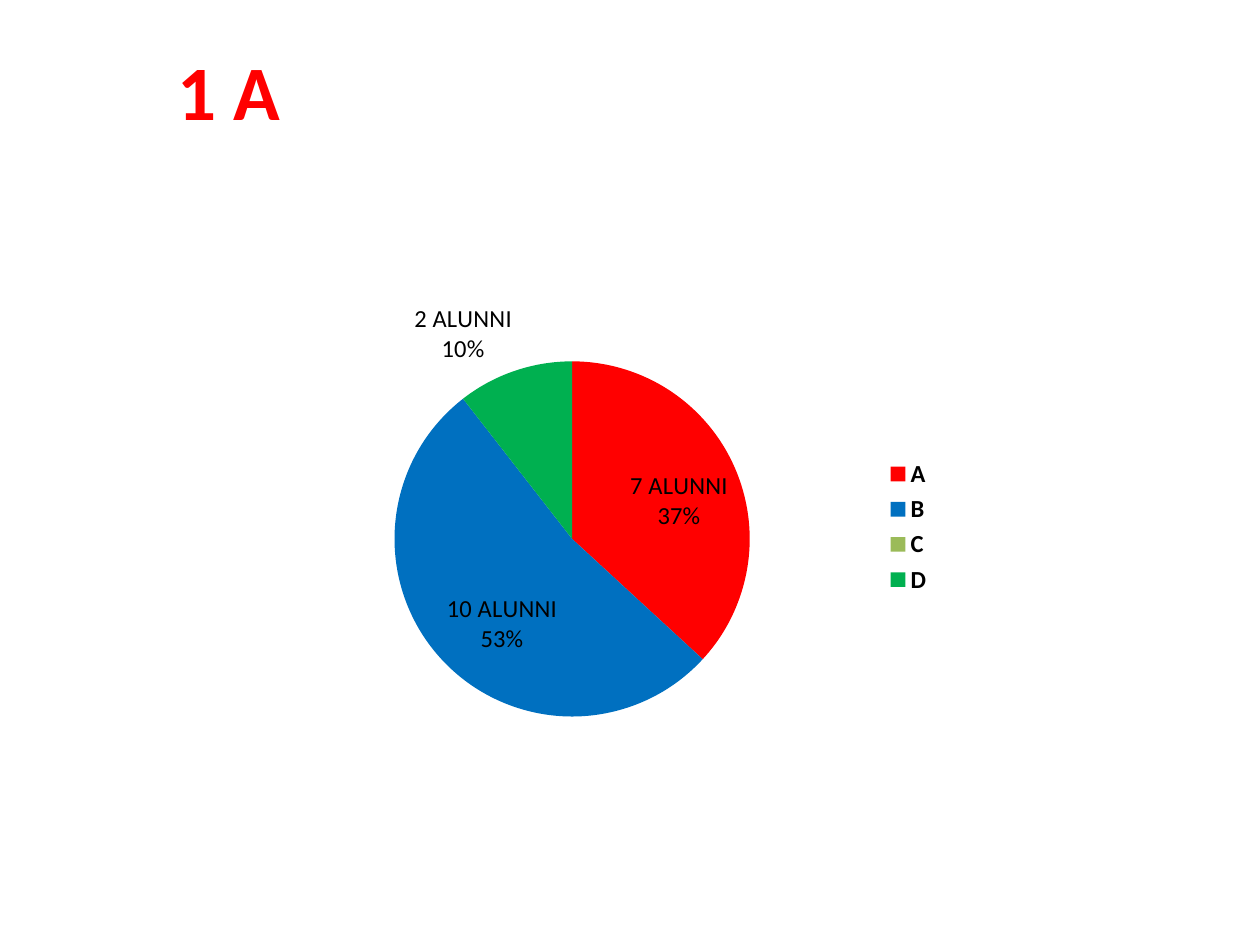
from lxml.etree import SubElement
from pptx import Presentation
from pptx.chart.data import CategoryChartData
from pptx.dml.color import RGBColor
from pptx.enum.chart import XL_CHART_TYPE, XL_LABEL_POSITION, XL_LEGEND_POSITION
from pptx.enum.text import MSO_ANCHOR, PP_ALIGN
from pptx.oxml.ns import qn
from pptx.util import Inches, Pt

FONT = "Calibri"
COLORS = {
    "title": "FF0000",
    "text": "000000",
    "A": "FF0000",
    "B": "0070C0",
    "C": "9BBB59",
    "D": "00B050",
}
PUPILS = {"A": 7, "B": 10, "C": None, "D": 2}
LABELS = {
    "A": (["7 ALUNNI", "37%"], XL_LABEL_POSITION.INSIDE_END),
    "B": (["10 ALUNNI", "53%"], XL_LABEL_POSITION.INSIDE_END),
    "D": (["2 ALUNNI", "10%"], XL_LABEL_POSITION.OUTSIDE_END),
}
TITLE_BOX = (0.083, 0.039, 0.197, 0.112)
CHART_BOX = (0.181, 0.3, 0.569, 0.515)
PIE_SHARES = {"x": 0.23, "y": 0.16, "w": 0.5, "h": 0.73}


def share_box(deck, shares):
    sides = (deck.slide_width, deck.slide_height) * 2
    return [round(share * side) for share, side in zip(shares, sides)]


def style_font(font, size, color, bold=False):
    font.name = FONT
    font.size = Pt(size)
    font.bold = bold
    font.color.rgb = RGBColor.from_string(COLORS[color])


def place_title(page, box):
    title = page.shapes.title
    title.left, title.top, title.width, title.height = box
    frame = title.text_frame
    frame.text = "1 A"
    frame.vertical_anchor = MSO_ANCHOR.MIDDLE
    para = frame.paragraphs[0]
    para.alignment = PP_ALIGN.CENTER
    style_font(para.runs[0].font, 44, "title", bold=True)


def fix_pie_area(chart):
    plot_area = chart.plots[0]._element.getparent()
    layout = plot_area.find(qn("c:layout"))
    if layout is None:
        layout = SubElement(plot_area, qn("c:layout"))
        plot_area.insert(0, layout)
    manual = SubElement(layout, qn("c:manualLayout"))
    settings = {"layoutTarget": "inner", "xMode": "edge", "yMode": "edge", **PIE_SHARES}
    for name, value in settings.items():
        SubElement(manual, qn(f"c:{name}")).set("val", str(value))


def label_slice(point, lines, position):
    label = point.data_label
    frame = label.text_frame
    frame.text = "\n".join(lines)
    for para in frame.paragraphs:
        for span in para.runs:
            style_font(span.font, 14, "text")
    label.position = position


def place_pie(page, box):
    data = CategoryChartData()
    data.categories = list(PUPILS)
    data.add_series("Series 1", list(PUPILS.values()))
    chart = page.shapes.add_chart(XL_CHART_TYPE.PIE, *box, data).chart
    chart.has_title = False
    style_font(chart.font, 10, "text")
    chart.has_legend = True
    chart.legend.position = XL_LEGEND_POSITION.RIGHT
    chart.legend.include_in_layout = False
    style_font(chart.legend.font, 14, "text", bold=True)

    plot = chart.plots[0]
    plot.vary_by_categories = True
    series = plot.series[0]
    series.data_labels.show_value = True
    series.data_labels.show_percentage = True
    style_font(series.data_labels.font, 14, "text", bold=True)
    for index, grade in enumerate(PUPILS):
        point = series.points[index]
        point.format.fill.solid()
        point.format.fill.fore_color.rgb = RGBColor.from_string(COLORS[grade])
        if grade in LABELS:
            label_slice(point, *LABELS[grade])
    fix_pie_area(chart)


def main():
    deck = Presentation()
    deck.slide_width, deck.slide_height = Inches(10), Inches(7.5)
    page = deck.slides.add_slide(deck.slide_layouts[5])
    place_title(page, share_box(deck, TITLE_BOX))
    place_pie(page, share_box(deck, CHART_BOX))
    deck.save("out.pptx")


if __name__ == "__main__":
    main()
